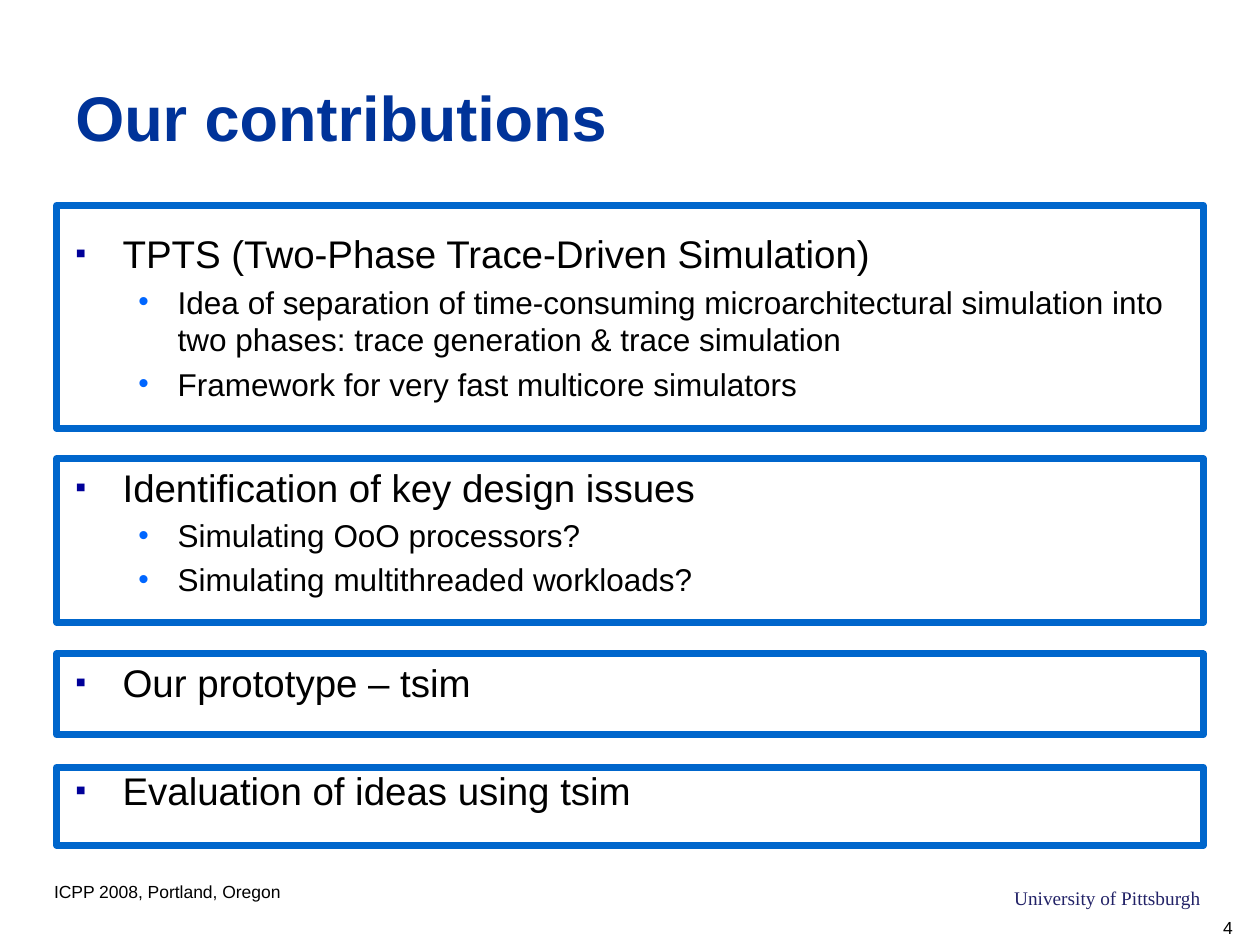
import pptx
import pptx.dml.color
import pptx.enum.shapes
import pptx.enum.text
import pptx.oxml.ns
import pptx.util
from lxml import etree

Pt = pptx.util.Pt
ANCHOR = pptx.enum.text.MSO_ANCHOR
COLORS = {"title": "003399", "text": "000000", "school": "222267",
          "square": "000099", "dot": "0066FF", "frame": "0066CC"}


def rgb(name):
    return pptx.dml.color.RGBColor.from_string(COLORS[name])


def add_text(box, wrap, paragraphs, anchor=ANCHOR.TOP):
    """Add a text box; each paragraph is its text and a dict of formats."""
    frame = slide.shapes.add_textbox(*map(Pt, box)).text_frame
    frame.word_wrap = wrap
    frame.vertical_anchor = anchor
    for index, (text, style) in enumerate(paragraphs):
        line = frame.add_paragraph() if index else frame.paragraphs[0]
        line.text = text
        if "bullet" in style:
            symbol, color, percent, margin, hanging = style["bullet"]
            props = line._p.get_or_add_pPr()
            props.set("marL", str(Pt(margin)))
            props.set("indent", str(-Pt(hanging)))
            qn = pptx.oxml.ns.qn
            bullet_color = etree.SubElement(props, qn("a:buClr"))
            etree.SubElement(bullet_color, qn("a:srgbClr"), val=COLORS[color])
            etree.SubElement(props, qn("a:buSzPct"), val=str(percent * 1000))
            etree.SubElement(props, qn("a:buFont"), typeface="Arial")
            etree.SubElement(props, qn("a:buChar"), char=symbol)
        if index:
            line.space_before = Pt(style["before"])
        line.font.color.rgb = rgb(style.get("color", "text"))
        for key, value in {"name": "Arial", **style["font"]}.items():
            setattr(line.font, key, value)


deck = pptx.Presentation()
deck.slide_width, deck.slide_height = Pt(720), Pt(540)
slide = deck.slides.add_slide(deck.slide_layouts[6])

# Footer: venue, school, page number
small = {"font": {"size": Pt(10)}}
school = {"font": {"size": Pt(11), "name": "Times New Roman"}, "color": "school"}
add_text((23.8, 499.7, 144, 19.4), False, [("ICPP 2008, Portland, Oregon", small)])
add_text((572.4, 502.6, 121.7, 20.9), False, [("University of Pittsburgh", school)])
add_text((691.9, 520.6, 28.1, 19.4), False, [("4", small)])

# Title
add_text((36, 21.6, 648, 90), True,
         [("Our contributions",
           {"font": {"size": Pt(36), "bold": True}, "color": "title"})],
         ANCHOR.MIDDLE)

# Contributions, each with its details
contributions = [
    ("TPTS (Two-Phase Trace-Driven Simulation)",
     ["Idea of separation of time-consuming microarchitectural simulation into "
      "two phases: trace generation & trace simulation",
      "Framework for very fast multicore simulators"]),
    ("Identification of key design issues",
     ["Simulating OoO processors?", "Simulating multithreaded workloads?"]),
    ("Our prototype – tsim", []),
    ("Evaluation of ideas using tsim", []),
]
heading = {"font": {"size": Pt(22)}, "before": 35,
           "bullet": ("▪", "square", 80, 27, 27)}
detail = {"font": {"size": Pt(18)}, "before": 3.6,
          "bullet": ("•", "dot", 95, 58.5, 22.5)}
body = []
for contribution, details in contributions:
    body.append((contribution, heading))
    body += [(text, detail) for text in details]
add_text((36, 128, 648, 354), True, body)

# Frame around each contribution
for top, height in [(117.4, 127.4), (262.1, 93.6), (373.7, 46.1), (438.5, 44.6)]:
    frame = slide.shapes.add_shape(pptx.enum.shapes.MSO_SHAPE.RECTANGLE,
                                   Pt(32.4), Pt(top), Pt(655.2), Pt(height))
    frame.shadow.inherit = False
    frame.fill.background()
    frame.line.color.rgb = rgb("frame")
    frame.line.width = Pt(4)

deck.save("out.pptx")
